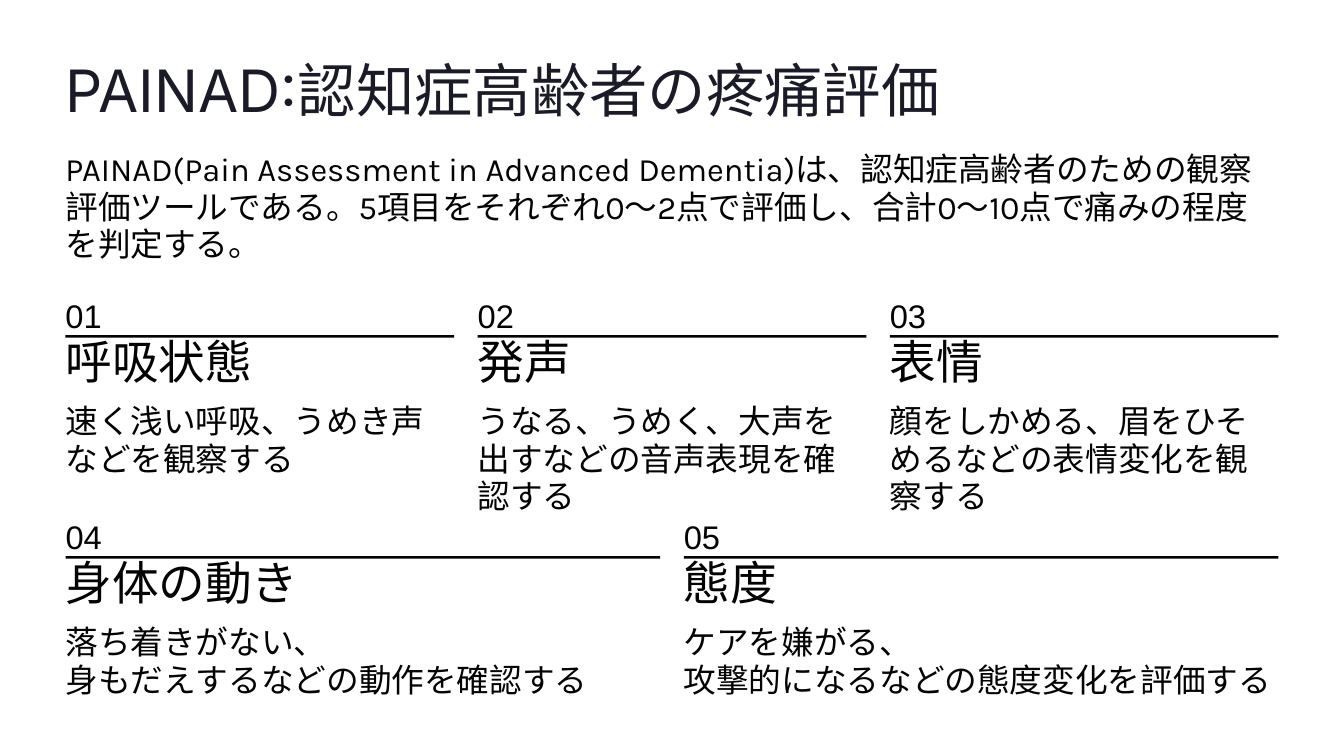
from pptx import Presentation
from pptx.dml.color import RGBColor
from pptx.enum.shapes import MSO_SHAPE
from pptx.enum.text import MSO_ANCHOR, MSO_AUTO_SIZE, PP_ALIGN
from pptx.util import Inches, Pt

RECT = MSO_SHAPE.RECTANGLE
TOP = MSO_ANCHOR.TOP
NO_FIT = MSO_AUTO_SIZE.NONE
LEFT = PP_ALIGN.LEFT
COLORS = {"title": "1B1B27", "ink": "030303"}
MARGIN, CONTENT_W, GAP = 0.78, 14.44, 0.28

ROWS = [
    (3.55, 0.89, [
        ("呼吸状態", ["速く浅い呼吸、うめき声などを観察する"]),
        ("発声", ["うなる、うめく、大声を出すなどの音声表現を確認する"]),
        ("表情", ["顔をしかめる、眉をひそめるなどの表情変化を観察する"]),
    ]),
    (6.18, 0.45, [
        ("身体の動き", ["落ち着きがない、", "身もだえするなどの動作を確認する"]),
        ("態度", ["ケアを嫌がる、", "攻撃的になるなどの態度変化を評価する"]),
    ]),
]


def write(sp, lines, size, spacing, font, color="ink"):
    tf = sp.text_frame
    tf.margin_left = tf.margin_right = tf.margin_top = tf.margin_bottom = 0
    tf.auto_size = NO_FIT
    tf.word_wrap = True
    tf.vertical_anchor = TOP
    for i, line in enumerate(lines):
        p = tf.add_paragraph() if i else tf.paragraphs[0]
        p.text = line
        p.alignment = LEFT
        p.line_spacing = Pt(spacing)
        p.font.size = Pt(size)
        p.font.name = font
        p.font.color.rgb = RGBColor.from_string(COLORS[color])


def add_text(x, y, w, h, lines, size, spacing, font):
    sp = s.shapes.add_textbox(Inches(x), Inches(y), Inches(w), Inches(h))
    write(sp, lines, size, spacing, font)


prs = Presentation()
prs.slide_width, prs.slide_height = Inches(16), Inches(9)
s = prs.slides.add_slide(prs.slide_layouts[5])

title = s.shapes.title
title.left, title.top = Inches(MARGIN), Inches(0.61)
title.width, title.height = Inches(CONTENT_W), Inches(0.87)
write(title, ["PAINAD:認知症高齢者の疼痛評価"], 50, 62.5, "Inter", "title")

intro = (
    "PAINAD(Pain Assessment in Advanced Dementia)は、認知症高齢者のための観察評価ツールである。"
    "5項目をそれぞれ0〜2点で評価し、合計0〜10点で痛みの程度を判定する。"
)
add_text(MARGIN, 1.8, CONTENT_W, 0.89, [intro], 28, 32, "Karla")

number = 0
for top, body_h, items in ROWS:
    w = (CONTENT_W - GAP * (len(items) - 1)) / len(items)
    for col, (heading, lines) in enumerate(items):
        number += 1
        x = MARGIN + col * (w + GAP)
        add_text(x, top, w, 0.35, [f"{number:02d}"], 28, 32, "Arial")
        rule = s.shapes.add_shape(RECT, Inches(x), Inches(top + 0.44), Inches(w), Inches(0.03))
        rule.shadow.inherit = False
        rule.fill.solid()
        rule.fill.fore_color.rgb = RGBColor.from_string(COLORS["ink"])
        rule.line.fill.background()
        add_text(x, top + 0.65, w, 0.44, [heading], 40, 31, "Inter")
        add_text(x, top + 1.25, w, body_h, lines, 28, 32, "Karla")

prs.save("out.pptx")
